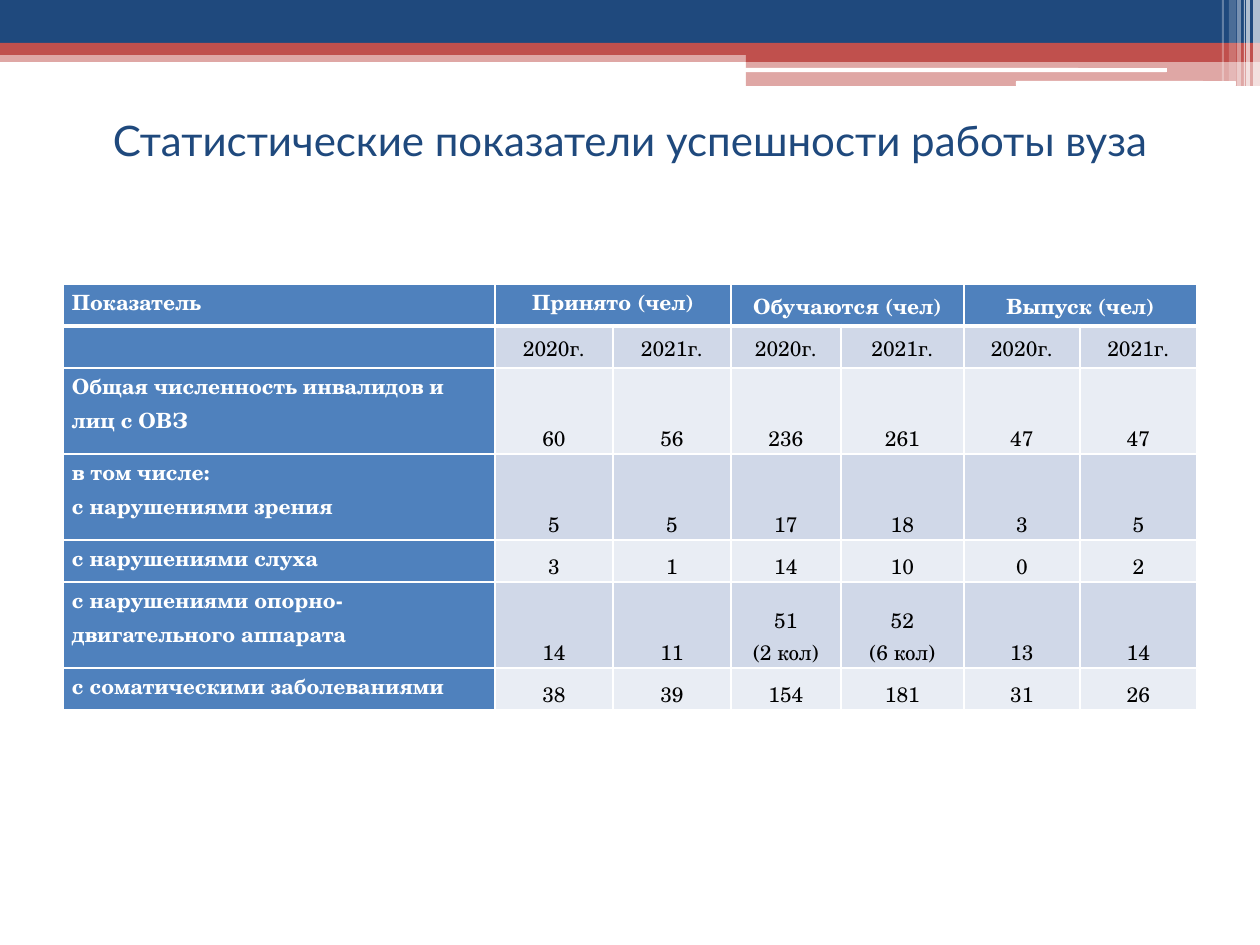
from pptx import Presentation
from pptx import util as u
from pptx.dml.color import RGBColor
from pptx.enum import shapes, text
from pptx.oxml import parse_xml
from pptx.oxml.ns import nsdecls, qn
from lxml import etree

SCALE = 914400 / 126
NAVY = RGBColor(0x1F, 0x49, 0x7D)
RED = RGBColor(0xC0, 0x50, 0x4D)
BLUE = RGBColor(0x4F, 0x81, 0xBD)
BAND_DARK = RGBColor(0xD0, 0xD8, 0xE8)
BAND_LIGHT = RGBColor(0xE9, 0xED, 0xF4)
WHITE = RGBColor(0xFF, 0xFF, 0xFF)
BLACK = RGBColor(0x00, 0x00, 0x00)

TOP, MIDDLE, BOTTOM = text.MSO_ANCHOR.TOP, text.MSO_ANCHOR.MIDDLE, text.MSO_ANCHOR.BOTTOM
LEFT, CENTER = text.PP_ALIGN.LEFT, text.PP_ALIGN.CENTER
RECT, ROUNDED = shapes.MSO_SHAPE.RECTANGLE, shapes.MSO_SHAPE.ROUNDED_RECTANGLE

BANDS = [
    (RECT, 0, 50, 1260, 12, RED, 50),
    (RECT, 0, 0, 1260, 43, NAVY, 100),
    (RECT, 0, 43, 1260, 12, RED, 100),
    (RECT, 746, 49, 514, 13, RED, 100),
    (RECT, 746, 61, 514, 25, RED, 50),
    (ROUNDED, 745, 68, 422, 4, WHITE, 100),
    (ROUNDED, 1016, 81, 220, 5, WHITE, 100),
]
STRIPES = [(1253, 7, 86, 65), (1246, 4, 86, 65), (1244, 1, 86, 60),
           (1237, 4, 86, 40), (1229, 7, 81, 20), (1222, 2, 81, 30)]

COLUMNS = [432, 118, 118, 110, 123, 116, 117]
ROWS = [42, 42, 86, 86, 42, 86, 42]
INDICATORS = [
    ["Показатель", "Принято (чел)", "", "Обучаются (чел)", "", "Выпуск (чел)", ""],
    [""] + ["2020г.", "2021г."] * 3,
    ["Общая численность инвалидов и лиц с ОВЗ", "60", "56", "236", "261", "47", "47"],
    ["в том числе:\nс нарушениями зрения", "5", "5", "17", "18", "3", "5"],
    ["с нарушениями слуха", "3", "1", "14", "10", "0", "2"],
    ["с нарушениями опорно-двигательного аппарата", "14", "11",
     "51\n(2 кол)", "52\n(6 кол)", "13", "14"],
    ["с соматическими заболеваниями", "38", "39", "154", "181", "31", "26"],
]


def px(length):
    return u.Emu(round(length * SCALE))


def write(frame, content, *, font, size, color, bold=False, align=LEFT, spacing=1.0):
    for index, line in enumerate(content.split("\n")):
        paragraph = frame.paragraphs[0] if index == 0 else frame.add_paragraph()
        paragraph.alignment = align
        paragraph.line_spacing = spacing
        run = paragraph.add_run()
        run.text = line
        run.font.name = font
        run.font.size = u.Pt(size)
        run.font.bold = bold
        run.font.color.rgb = color


class Deck:
    heading_font = "Lato"
    body_font = "TeX Gyre Schola"

    def __init__(self):
        self.presentation = Presentation()
        self.presentation.slide_width = px(1260)
        self.presentation.slide_height = px(945)
        self.slide = self.presentation.slides.add_slide(self.presentation.slide_layouts[5])

    def band(self, preset, left, top, width, height, color, opacity):
        band = self.slide.shapes.add_shape(preset, px(left), px(top), px(width), px(height))
        band.shadow.inherit = False
        band.line.fill.background()
        band.fill.solid()
        band.fill.fore_color.rgb = color
        if opacity < 100:
            tint = band.fill._xPr.find(qn("a:solidFill"))[0]
            etree.SubElement(tint, qn("a:alpha"), val=str(opacity * 1000))

    def title(self, content, left, top, width, height):
        heading = self.slide.shapes.title
        heading.left, heading.top = px(left), px(top)
        heading.width, heading.height = px(width), px(height)
        heading.text_frame.vertical_anchor = MIDDLE
        write(heading.text_frame, content, font=self.heading_font, size=24,
              color=NAVY, align=CENTER)

    def cell(self, cell, content, row, column):
        properties = cell._tc.get_or_add_tcPr()
        weights = {"L": 1, "R": 1, "T": 3 if row == 1 else 1, "B": 3 if row == 0 else 1}
        for side, points in weights.items():
            properties.append(parse_xml(
                f'<a:ln{side} {nsdecls("a")} w="{points * 12700}"><a:solidFill>'
                f'<a:srgbClr val="{WHITE}"/></a:solidFill></a:ln{side}>'))
        heading = row == 0 or column == 0
        cell.margin_left = cell.margin_right = px(9)
        cell.margin_top = cell.margin_bottom = 0
        cell.fill.solid()
        cell.fill.fore_color.rgb = BLUE if heading else BAND_DARK if row % 2 else BAND_LIGHT
        if column == 0 or (row == 0 and column < 3):
            cell.vertical_anchor = TOP
        else:
            cell.vertical_anchor = MIDDLE if row < 2 else BOTTOM
        if content:
            write(cell.text_frame, content, font=self.body_font, size=12,
                  color=WHITE if heading else BLACK, bold=heading,
                  align=CENTER if column else LEFT, spacing=1.06)

    def table(self, content, left, top, columns, rows):
        table = self.slide.shapes.add_table(
            len(rows), len(columns), px(left), px(top), px(sum(columns)), px(sum(rows))).table
        for column, width in zip(table.columns, columns):
            column.width = px(width)
        for row, height in zip(table.rows, rows):
            row.height = px(height)
        for row, line in enumerate(content):
            for column, value in enumerate(line):
                self.cell(table.cell(row, column), value, row, column)
        for column in range(1, len(columns), 2):
            table.cell(0, column).merge(table.cell(0, column + 1))


def main():
    deck = Deck()
    for band in BANDS:
        deck.band(*band)
    for left, width, height, opacity in STRIPES:
        deck.band(RECT, left, 0, width, height, WHITE, opacity)
    deck.title("Статистические показатели успешности работы вуза", 15, 76, 1230, 128)
    deck.table(INDICATORS, 63, 284, COLUMNS, ROWS)
    deck.presentation.save("out.pptx")


if __name__ == "__main__":
    main()
